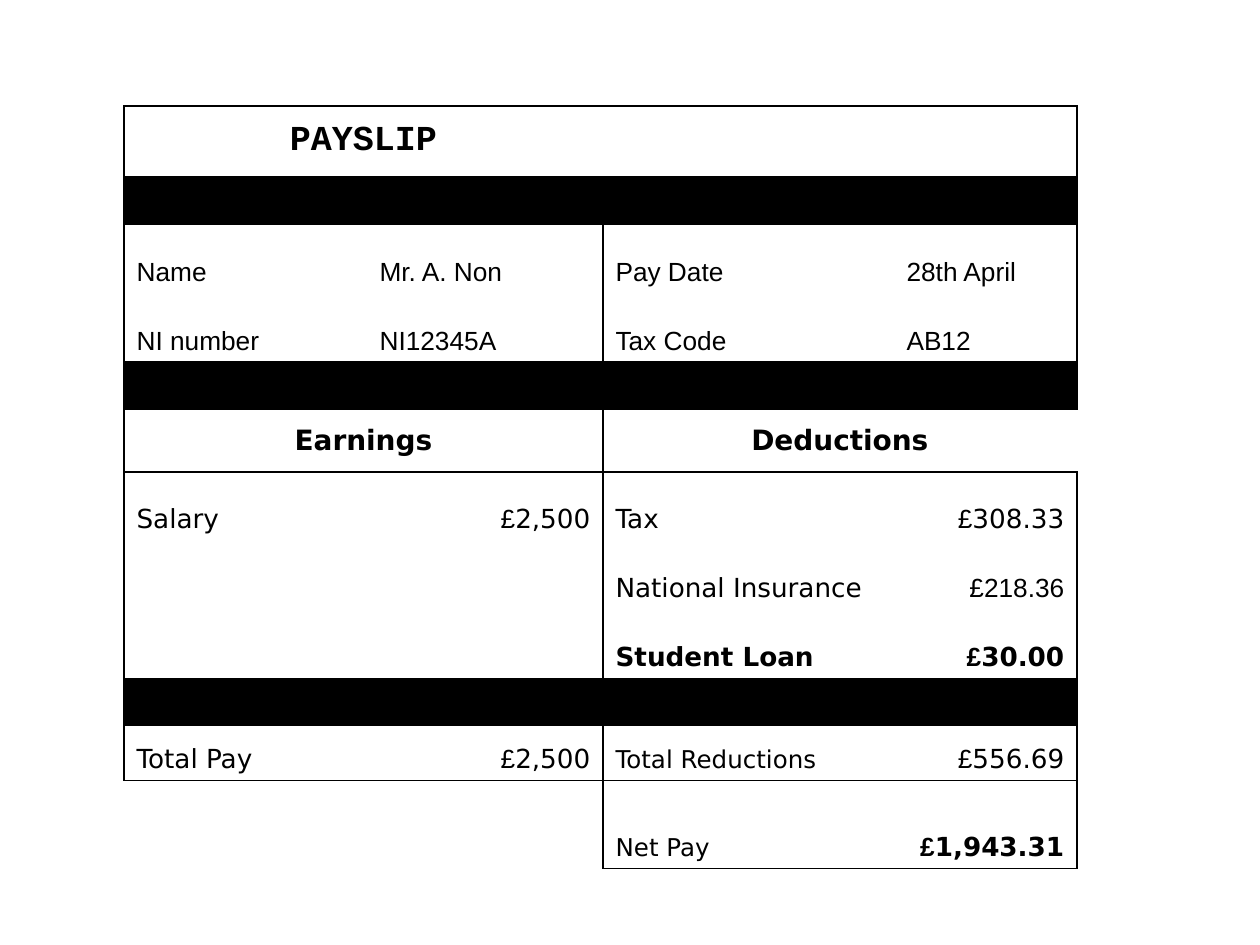
import pptx
import pptx.dml.color
import pptx.enum.text
import pptx.oxml
import pptx.oxml.ns
import pptx.util

PX = 914400 // 126
THEME = {
    "ink": pptx.dml.color.RGBColor(0, 0, 0),
    "sans": "Arial", "wide": "DejaVu Sans", "mono": "Courier New",
    "title": 20, "heading": 16, "body": 15, "small": 14, "line": 1,
}
ALIGN = pptx.enum.text.PP_ALIGN
ANCHOR = pptx.enum.text.MSO_ANCHOR


def write(cell, parts, size, bold=False, align=ALIGN.LEFT, anchor=ANCHOR.BOTTOM):
    """Fill a cell with (text, font) parts in one paragraph."""
    cell.vertical_anchor = anchor
    p = cell.text_frame.paragraphs[0]
    p.alignment = align
    for text, font in parts:
        r = p.add_run()
        r.text = text
        r.font.name = THEME[font]
        r.font.size = pptx.util.Pt(THEME[size])
        r.font.bold = bold
        r.font.color.rgb = THEME["ink"]


def set_borders(cell, sides):
    """Draw the named sides (L, R, T, B) and clear the others."""
    tcPr = cell._tc.get_or_add_tcPr()
    width = pptx.util.Pt(THEME["line"])
    for side in "LRTB":
        paint = "<a:noFill/>"
        if side in sides:
            paint = f'<a:solidFill><a:srgbClr val="{THEME["ink"]}"/></a:solidFill>'
        tcPr.append(pptx.oxml.parse_xml(
            f'<a:ln{side} {pptx.oxml.ns.nsdecls("a")} w="{width}">{paint}</a:ln{side}>'))


prs = pptx.Presentation()
prs.slide_width = 1260 * PX
prs.slide_height = 945 * PX
s = prs.slides.add_slide(prs.slide_layouts[6])

# Table grid
widths = [243, 236, 291, 183]
heights = [71, 47, 69, 69, 47, 63, 69, 69, 69, 47, 55, 88]
table = s.shapes.add_table(len(heights), len(widths), 124 * PX, 106 * PX,
                           sum(widths) * PX, sum(heights) * PX).table
table.first_row = False
table.horz_banding = False
for column, width in zip(table.columns, widths):
    column.width = width * PX
for row, height in zip(table.rows, heights):
    row.height = height * PX

# Outlined blocks: first row, last row, first column, last column, sides
bands = [1, 4, 9]
blocks = [(row, row, 0, 3, "LRTB") for row in [0] + bands]
for top, bottom in [(2, 3), (5, 5), (6, 8), (10, 10)]:
    blocks += [(top, bottom, 0, 1, "LRTB"), (top, bottom, 2, 3, "LRTB")]
blocks += [(11, 11, 0, 1, "TR"), (11, 11, 2, 3, "LRTB")]

for top, bottom, left, right, sides in blocks:
    for row in range(top, bottom + 1):
        for col in range(left, right + 1):
            cell = table.cell(row, col)
            edges = {"L": col == left, "R": col == right,
                     "T": row == top, "B": row == bottom}
            set_borders(cell, [side for side in sides if edges[side]])
            if row in bands:
                cell.fill.solid()
                cell.fill.fore_color.rgb = THEME["ink"]
                cell.margin_top = cell.margin_bottom = 0
            else:
                cell.fill.background()

# Title and section headings, each across two columns
for row, col, text, font, size in [
    (0, 0, "PAYSLIP", "mono", "title"),
    (5, 0, "Earnings", "wide", "heading"),
    (5, 2, "Deductions", "wide", "heading"),
]:
    table.cell(row, col).merge(table.cell(row, col + 1))
    write(table.cell(row, col), [(text, font)], size, True, ALIGN.CENTER, ANCHOR.MIDDLE)

# Employee details
details = [
    ["Name", "Mr. A. Non", "Pay Date", "28th April"],
    ["NI number", "NI12345A", "Tax Code", "AB12"],
]
for row, texts in enumerate(details, start=2):
    for col, text in enumerate(texts):
        write(table.cell(row, col), [(text, "sans")], "body")

# Pay lines: row, column, label, label size, label bold, amount, amount font, amount bold
for row, col, label, size, strong, amount, font, bold in [
    (6, 0, "Salary", "body", False, "2,500", "wide", False),
    (6, 2, "Tax", "body", False, "308.33", "wide", False),
    (7, 2, "National Insurance", "body", False, "218.36", "sans", False),
    (8, 2, "Student Loan", "body", True, "30.00", "wide", True),
    (10, 0, "Total Pay", "body", False, "2,500", "wide", False),
    (10, 2, "Total Reductions", "small", False, "556.69", "wide", False),
    (11, 2, "Net Pay", "small", False, "1,943.31", "wide", True),
]:
    write(table.cell(row, col), [(label, "wide")], size, strong)
    write(table.cell(row, col + 1), [("£", "sans"), (amount, font)], "body", bold, ALIGN.RIGHT)

prs.save("out.pptx")
